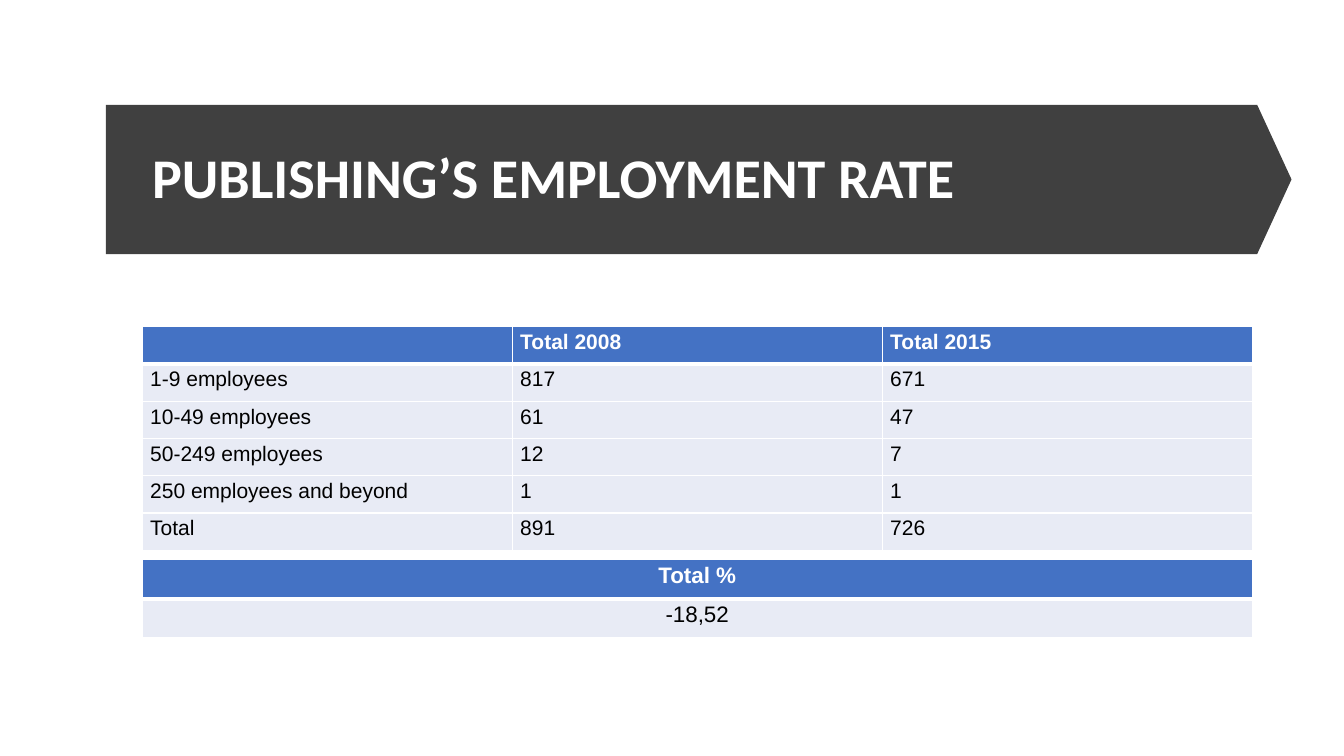
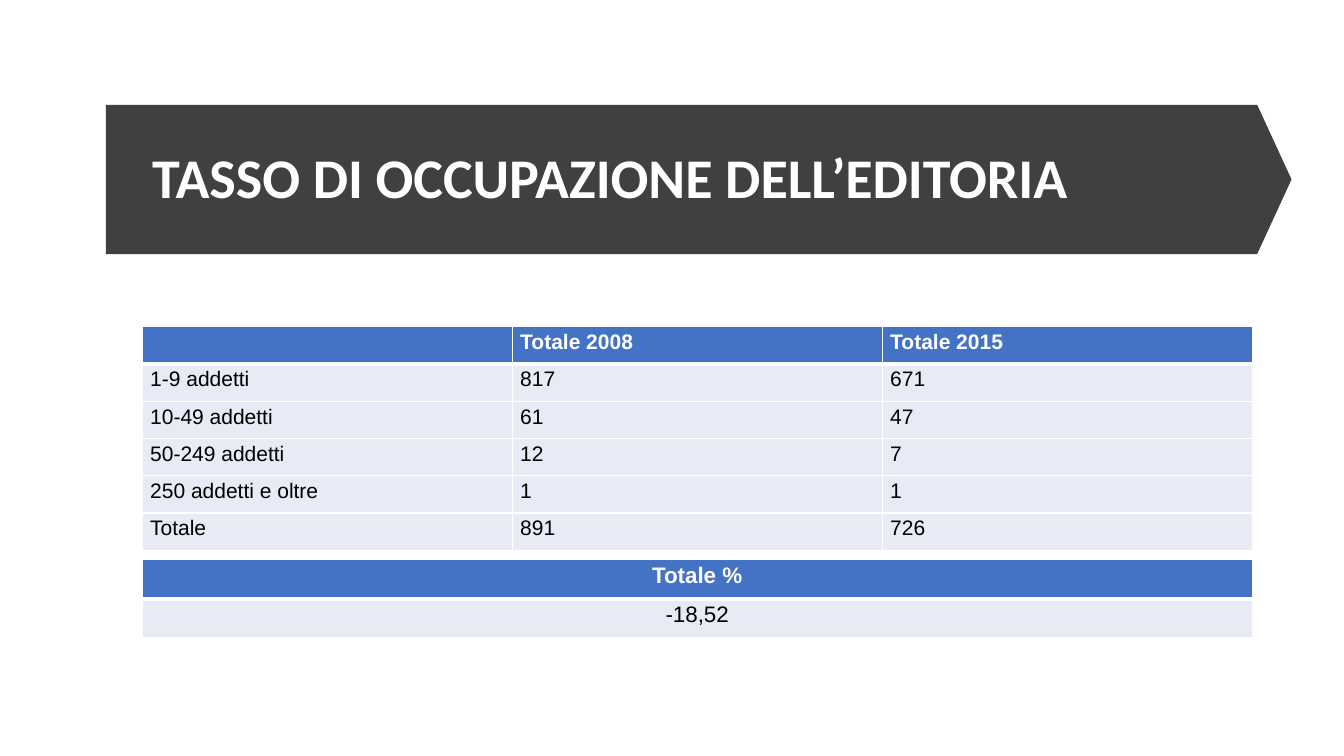
from dataclasses import dataclass

from lxml import etree
from pptx import Presentation
from pptx import util as u
from pptx.dml.color import RGBColor
from pptx.enum import shapes, text
from pptx.oxml import ns


@dataclass(frozen=True)
class Theme:
    band: str = "404040"
    header: str = "4472C4"
    body: str = "E8EBF5"
    light: str = "FFFFFF"
    dark: str = "000000"
    title_font: str = "Calibri"
    table_font: str = "Arial"
    title_size: int = 40
    table_size: int = 15
    total_size: int = 16
    rule: int = 1
    header_rule: int = 3


@dataclass(frozen=True)
class Box:
    left: float
    top: float
    width: float
    height: float

    def lengths(self):
        return [u.Inches(value) for value in (self.left, self.top, self.width, self.height)]


THEME = Theme()
BAND = Box(1.05, 1.04, 11.76, 1.48)
TABLE = Box(1.41, 3.24, 11.01, 2.22)
TOTAL = Box(1.41, 5.55, 11.01, 0.78)
COUNTS = [(817, 671), (61, 47), (12, 7), (1, 1), (891, 726)]
CHANGE = "-18,52"
SLIDES = [
    {
        "title": "PUBLISHING’S EMPLOYMENT RATE",
        "total": "Total",
        "sizes": ["1-9 employees", "10-49 employees", "50-249 employees", "250 employees and beyond"],
    },
    {
        "title": "TASSO DI OCCUPAZIONE DELL’EDITORIA",
        "total": "Totale",
        "sizes": ["1-9 addetti", "10-49 addetti", "50-249 addetti", "250 addetti e oltre"],
    },
]


def apply(target, formats):
    for name, value in formats.items():
        setattr(target, name, value)


def paint(fill, colour):
    fill.solid()
    fill.fore_color.rgb = RGBColor.from_string(colour)


def write(paragraph, words, colour, **formats):
    run = paragraph.add_run()
    run.text = words
    apply(run.font, formats)
    run.font.color.rgb = RGBColor.from_string(colour)


def add_borders(cell, bottom):
    properties = cell._tc.get_or_add_tcPr()
    widths = {"L": THEME.rule, "R": THEME.rule, "T": THEME.rule, "B": bottom}
    for side, width in widths.items():
        line = etree.SubElement(properties, ns.qn(f"a:ln{side}"), w=str(u.Pt(width)))
        fill = etree.SubElement(line, ns.qn("a:solidFill"))
        etree.SubElement(fill, ns.qn("a:srgbClr"), val=THEME.light)


def add_title(slide, box, words):
    band = slide.shapes.add_shape(shapes.MSO_SHAPE.PENTAGON, *box.lengths())
    band.adjustments[0] = 0.23
    band.shadow.inherit = False
    band.line.fill.background()
    paint(band.fill, THEME.band)
    title = slide.shapes.title
    title.element.addprevious(band.element)
    area = Box(box.left + 0.36, box.top + 0.28, box.width - 0.8, 0.94)
    apply(title, dict(zip(("left", "top", "width", "height"), area.lengths())))
    apply(title.text_frame, {
        "vertical_anchor": text.MSO_ANCHOR.MIDDLE,
        "word_wrap": True,
        "auto_size": text.MSO_AUTO_SIZE.NONE,
    })
    paragraph = title.text_frame.paragraphs[0]
    apply(paragraph, {"alignment": text.PP_ALIGN.LEFT, "line_spacing": 0.9})
    write(paragraph, words, THEME.light, name=THEME.title_font, size=u.Pt(THEME.title_size), bold=True)


def add_data_table(slide, box, rows, size, alignment, side_margin):
    table = slide.shapes.add_table(len(rows), len(rows[0]), *box.lengths()).table
    for column in table.columns:
        column.width = u.Inches(box.width / len(rows[0]))
    for index, values in enumerate(rows):
        is_header = index == 0
        table.rows[index].height = u.Inches(box.height / len(rows))
        for cell, value in zip(table.rows[index].cells, values):
            apply(cell, {
                "margin_left": u.Inches(side_margin),
                "margin_right": u.Inches(side_margin),
                "margin_top": u.Inches(0.04),
                "margin_bottom": u.Inches(0.04),
            })
            add_borders(cell, THEME.header_rule if is_header else THEME.rule)
            paint(cell.fill, THEME.header if is_header else THEME.body)
            paragraph = cell.text_frame.paragraphs[0]
            paragraph.alignment = alignment
            write(paragraph, str(value), THEME.light if is_header else THEME.dark,
                  name=THEME.table_font, size=u.Pt(size), bold=is_header)


def add_employment_slide(presentation, content):
    slide = presentation.slides.add_slide(presentation.slide_layouts[5])
    total = content["total"]
    labels = content["sizes"] + [total]
    rows = [("", f"{total} 2008", f"{total} 2015")]
    rows += [(label, *counts) for label, counts in zip(labels, COUNTS)]
    add_title(slide, BAND, content["title"])
    add_data_table(slide, TABLE, rows, THEME.table_size, text.PP_ALIGN.LEFT, 0.08)
    add_data_table(slide, TOTAL, [(f"{total} %",), (CHANGE,)], THEME.total_size, text.PP_ALIGN.CENTER, 0.09)


def main():
    presentation = Presentation()
    apply(presentation, {"slide_width": u.Inches(13.33), "slide_height": u.Inches(7.5)})
    for content in SLIDES:
        add_employment_slide(presentation, content)
    presentation.save("out.pptx")


if __name__ == "__main__":
    main()
